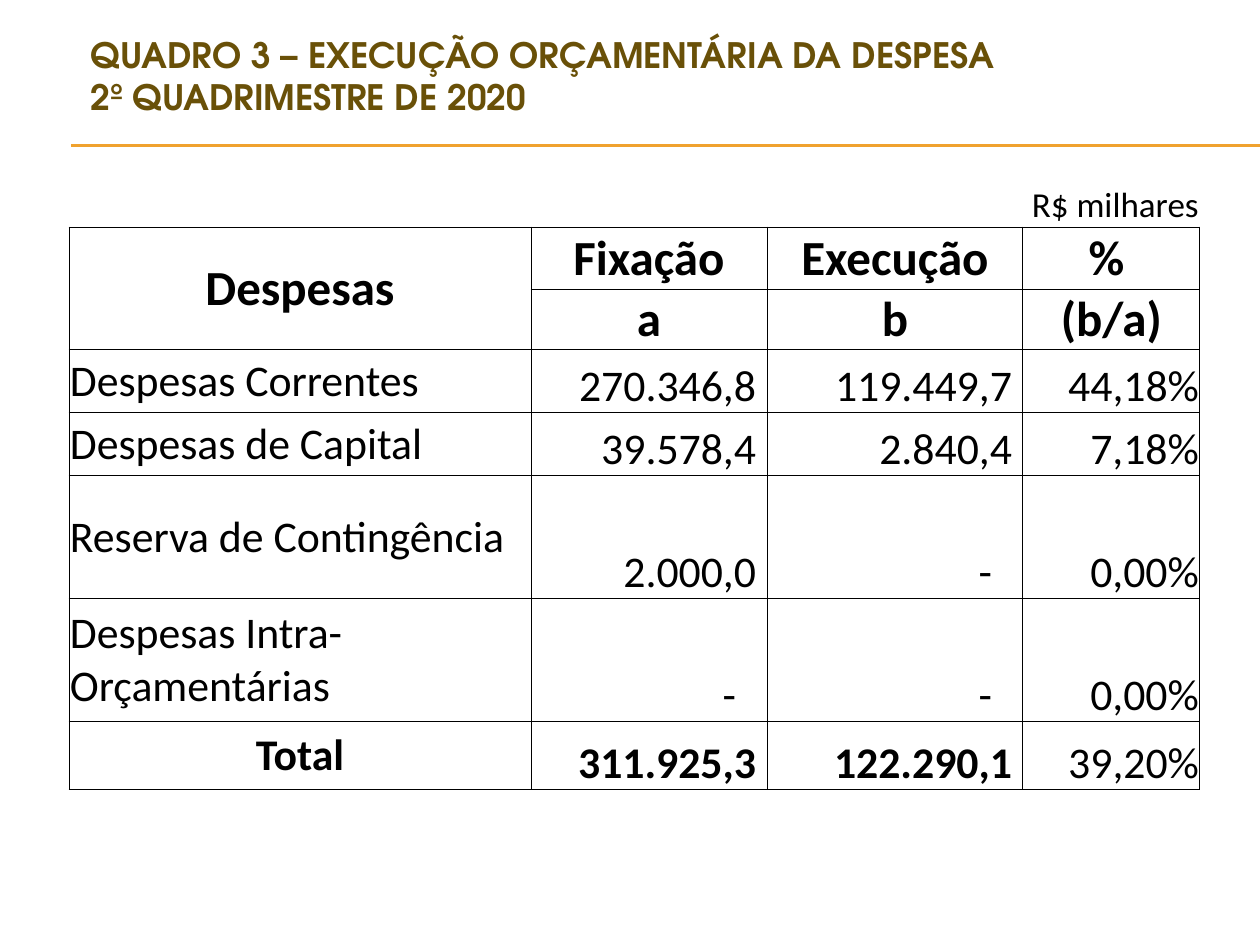
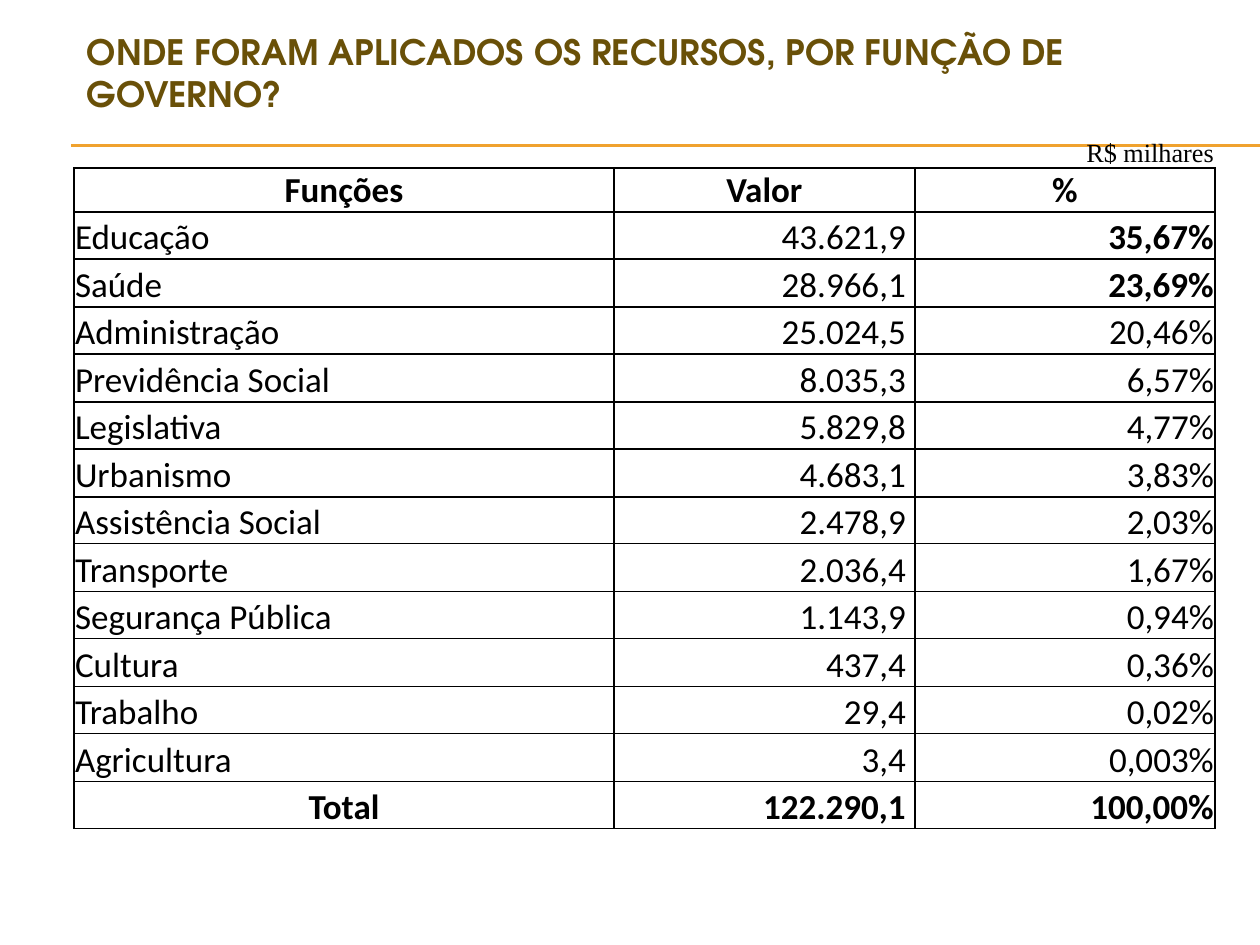
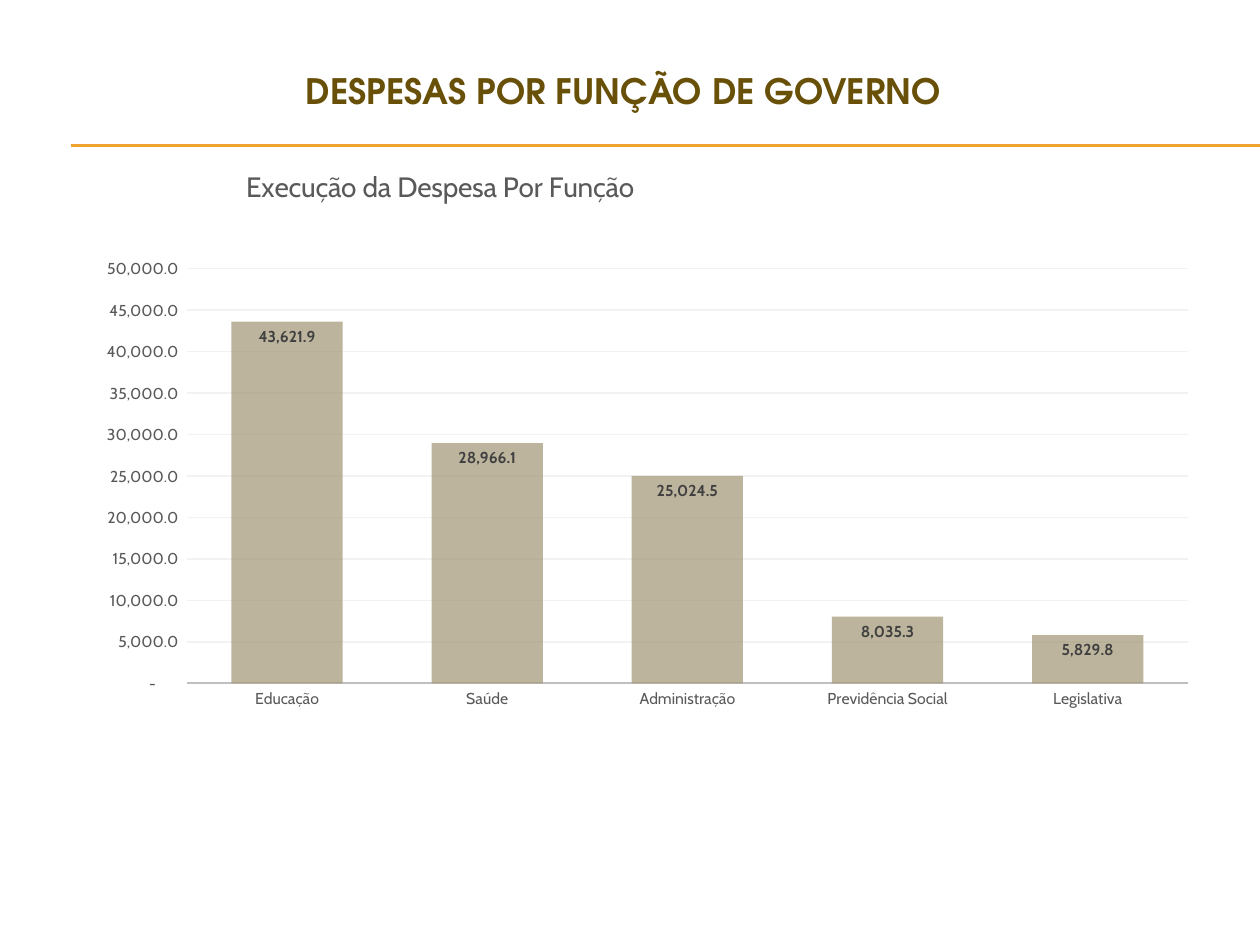
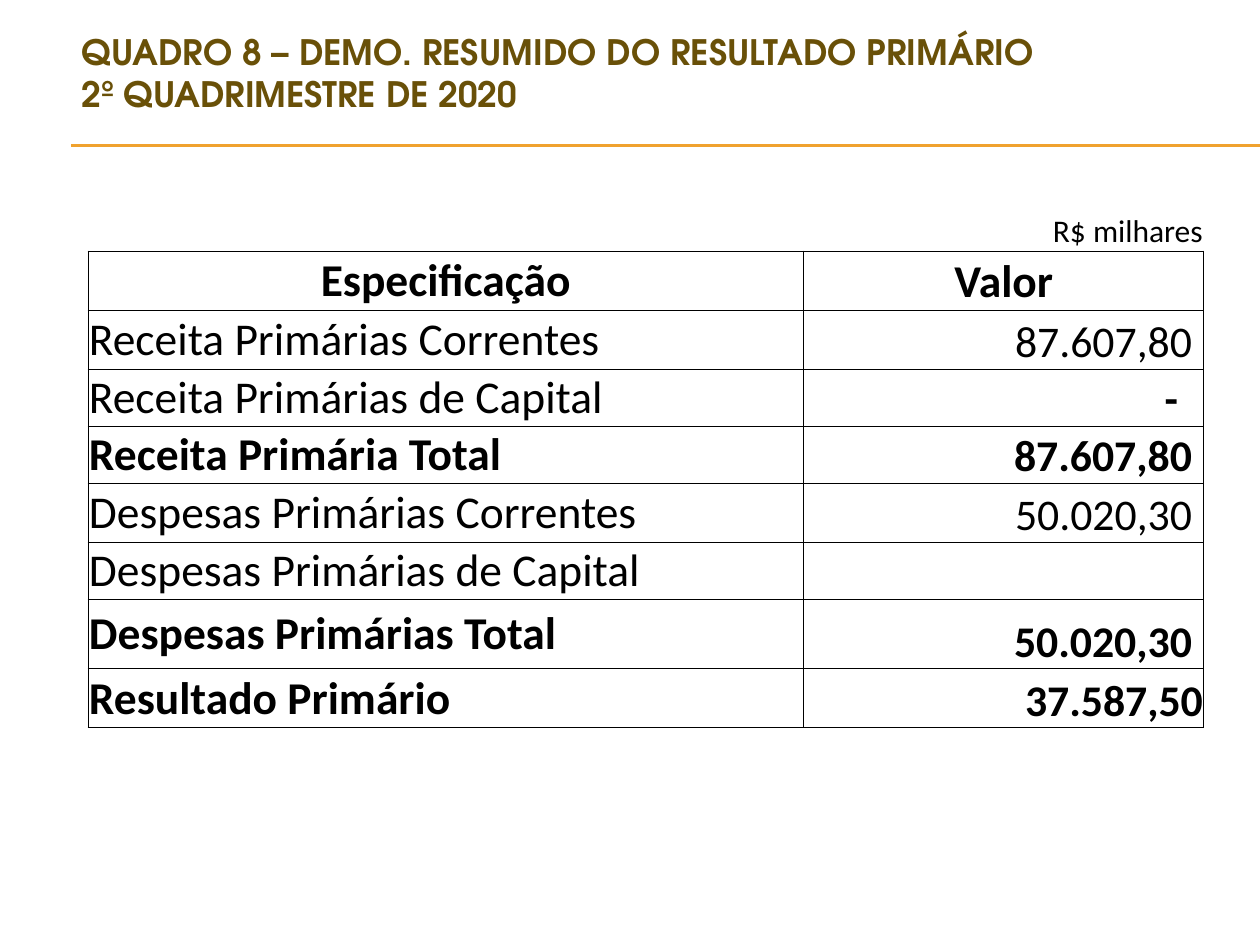
from dataclasses import dataclass

from lxml import etree
from pptx import Presentation
from pptx import util as u
from pptx.chart.data import CategoryChartData
from pptx.dml.color import RGBColor
from pptx.enum import chart as kinds, shapes, text
from pptx.oxml.ns import qn

ALIGN, ANCHOR = text.PP_ALIGN, text.MSO_ANCHOR


@dataclass(frozen=True)
class Theme:
    gold: str = "F0A22E"
    brown: str = "695008"
    black: str = "000000"
    gray: str = "595959"
    dark: str = "404040"
    axis: str = "BFBFBF"
    grid: str = "F2F2F2"
    bar: str = "A19574"
    head: str = "TeX Gyre Adventor"
    body: str = "Calibri"
    serif: str = "Times New Roman"
    plot: str = "Cabin"
    title: int = 20
    label: int = 9
    chart: int = 16


T = Theme()
MONEY = '_-* #,##0.0_-;\\-* #,##0.0_-;_-* "-"??_-;'


def px(n):
    return u.Inches(n / 126)


def put(item, **vals):
    for name, val in vals.items():
        setattr(item, name, val)


def ink(font, size, face=T.body, color=T.black, bold=False):
    put(font, size=u.Pt(size), name=face, bold=bold)
    font.color.rgb = RGBColor.from_string(color)


def stroke(line, color, width):
    line.color.rgb = RGBColor.from_string(color)
    line.width = u.Pt(width)


def node(parent, tag, **attrs):
    return etree.SubElement(parent, qn(tag), attrs)


def rule(slide, y):
    line = slide.shapes.add_connector(
        shapes.MSO_CONNECTOR.STRAIGHT, px(71), px(y), px(1260), px(y))
    stroke(line.line, T.gold, 0.75)
    node(line.element.spPr, "a:effectLst")


def page(deck, title, box, align=ALIGN.LEFT):
    slide = deck.slides.add_slide(deck.slide_layouts[5])
    for y in (145, 146):
        rule(slide, y)
    head = slide.shapes.title
    put(head, **dict(zip(("left", "top", "width", "height"), map(px, box))))
    frame = head.text_frame
    put(frame, text=title, word_wrap=True, auto_size=text.MSO_AUTO_SIZE.NONE,
        vertical_anchor=ANCHOR.MIDDLE)
    para = frame.paragraphs[0]
    para.alignment = align
    for run in para.runs:
        ink(run.font, T.title, T.head, T.brown, True)
    return slide


def edge(cell, sides, width):
    props = cell._tc.get_or_add_tcPr()
    for spot, side in enumerate("LRTB"):
        line = etree.Element(qn(f"a:ln{side}"), w=str(u.Pt(width)))
        if side in sides:
            node(node(line, "a:solidFill"), "a:srgbClr", val=T.black)
        else:
            node(line, "a:noFill")
        props.insert(spot, line)


def write(cell, words, size, face, bold, align, anchor, right):
    put(cell, text=words, vertical_anchor=anchor, margin_right=px(right))
    para = cell.text_frame.paragraphs[0]
    para.alignment = align
    for run in para.runs:
        ink(run.font, size, face, T.black, bold)


def grid(slide, spot, cols, rows, data, sizes, pads, width=0.5, unit=T.body,
         side=ANCHOR.MIDDLE, spans=(), bold=(), tweak=None):
    table = slide.shapes.add_table(
        len(rows), len(cols), *map(px, (*spot, sum(cols), sum(rows)))).table
    put(table, first_row=False, horz_banding=False)
    for col, size in zip(table.columns, cols):
        col.width = px(size)
    for row, size in zip(table.rows, rows):
        row.height = px(size)
    for row, col, high, wide in spans:
        table.cell(row, col).merge(table.cell(row + high - 1, col + wide - 1))

    note, top, name, num = sizes
    heads = 1 + max([high for row, _, high, _ in spans if row == 1], default=1)
    for r, line in enumerate(data):
        for c, words in enumerate(line):
            cell = table.cell(r, c)
            cell.fill.background()
            put(cell, margin_left=px(1), margin_right=0, margin_top=0, margin_bottom=0)
            edge(cell, "LRTB" if r else "B", width)
            if not words:
                continue
            pad = 1 if "%" in words else pads[words == "-"]
            pad = (tweak or {}).get((r, c), pad)
            if r == 0:
                look = note, unit, False, ALIGN.RIGHT, ANCHOR.BOTTOM, 1
            elif r < heads:
                look = (top, T.body, True, ALIGN.CENTER,
                        side if c == 0 else ANCHOR.BOTTOM, pad if "%" in words else 1)
            elif c == 0:
                align = ALIGN.CENTER if words == "Total" else ALIGN.LEFT
                look = name, T.body, (r, c) in bold, align, side, 1
            else:
                look = num, T.body, (r, c) in bold, ALIGN.RIGHT, ANCHOR.BOTTOM, pad
            write(cell, words, *look)


def place(parent, index, **vals):
    for old in parent.findall(qn("c:layout")):
        parent.remove(old)
    layout = etree.Element(qn("c:layout"))
    manual = node(layout, "c:manualLayout")
    for tag, val in vals.items():
        node(manual, f"c:{tag}", val=str(val))
    parent.insert(index, layout)


def bars(slide, box, title, names, vals):
    data = CategoryChartData(number_format=MONEY)
    data.categories = names
    data.add_series("Series 1", vals)
    chart = slide.shapes.add_chart(
        kinds.XL_CHART_TYPE.COLUMN_CLUSTERED, *map(px, box), data).chart
    chart.has_legend = False
    ink(chart.font, 10, T.plot)

    head = chart.chart_title
    head.text_frame.text = title
    ink(head.text_frame.paragraphs[0].runs[0].font, T.chart, T.plot, T.gray)
    place(head._element, 1, xMode="edge", yMode="edge", x=0.2, y=0.01)

    plot = chart.plots[0]
    put(plot, gap_width=80, overlap=25, vary_by_categories=False, has_data_labels=True)
    place(plot._element.getparent(), 0, layoutTarget="inner", xMode="edge",
          yMode="edge", x=0.155, y=0.144, w=0.83, h=0.525)
    series = plot.series[0]
    series.format.fill.solid()
    series.format.fill.fore_color.rgb = RGBColor.from_string(T.bar)
    node(next(series._element.iter(qn("a:srgbClr"))), "a:alpha", val="70000")
    labels = plot.data_labels
    put(labels, show_value=True, number_format=MONEY, number_format_is_linked=False,
        position=kinds.XL_LABEL_POSITION.INSIDE_END)
    ink(labels.font, T.label, T.plot, T.dark, True)

    for axis in (chart.category_axis, chart.value_axis):
        put(axis, major_tick_mark=kinds.XL_TICK_MARK.NONE,
            minor_tick_mark=kinds.XL_TICK_MARK.NONE)
        ink(axis.tick_labels.font, T.label, T.plot, T.gray)
    stroke(chart.category_axis.format.line, T.axis, 1.25)
    scale = chart.value_axis
    put(scale, minimum_scale=0, maximum_scale=50000, major_unit=5000,
        has_major_gridlines=True)
    put(scale.tick_labels, number_format=MONEY, number_format_is_linked=False)
    scale.format.line.fill.background()
    stroke(scale.major_gridlines.format.line, T.grid, 0.75)


def budget(deck):
    slide = page(deck, "QUADRO 3 – EXECUÇÃO ORÇAMENTÁRIA DA DESPESA\v"
                 "2º QUADRIMESTRE DE 2020", (78, 29, 1071, 93))
    lines = [
        ("Despesas", "Fixação", "Execução", "%"),
        ("", "a", "b", "(b/a)"),
        ("Despesas Correntes", "270.346,8", "119.449,7", "44,18%"),
        ("Despesas de Capital", "39.578,4", "2.840,4", "7,18%"),
        ("Reserva de Contingência", "2.000,0", "-", "0,00%"),
        ("Despesas Intra-Orçamentárias", "-", "-", "0,00%"),
        ("Total", "311.925,3", "122.290,1", "39,20%"),
    ]
    data = [[""] * 5 + ["R$ milhares"]]
    data += [(name, fixed, "", done, "", rate) for name, fixed, done, rate in lines]
    spans = [(1, 0, 2, 1)] + [(r, c, 1, 2) for r in range(1, 8) for c in (1, 3)]
    grid(slide, (69, 178), (462, 16, 220, 125, 131, 177),
         (49, 62, 61, 63, 63, 123, 123, 68), data, (20, 28, 25, 25), (11, 31),
         spans=spans, bold={(7, 0), (7, 1), (7, 3)}, tweak={(1, 5): 11})


def areas(deck):
    slide = page(deck, "ONDE FORAM APLICADOS OS RECURSOS, POR FUNÇÃO DE GOVERNO?",
                 (74, 26, 1071, 93))
    data = [
        ("", "", "R$ milhares"),
        ("Funções", "Valor", "%"),
        ("Educação", "43.621,9", "35,67%"),
        ("Saúde", "28.966,1", "23,69%"),
        ("Administração", "25.024,5", "20,46%"),
        ("Previdência Social", "8.035,3", "6,57%"),
        ("Legislativa", "5.829,8", "4,77%"),
        ("Urbanismo", "4.683,1", "3,83%"),
        ("Assistência Social", "2.478,9", "2,03%"),
        ("Transporte", "2.036,4", "1,67%"),
        ("Segurança Pública", "1.143,9", "0,94%"),
        ("Cultura", "437,4", "0,36%"),
        ("Trabalho", "29,4", "0,02%"),
        ("Agricultura", "3,4", "0,003%"),
        ("Total", "122.290,1", "100,00%"),
    ]
    grid(slide, (74, 125), (540, 301, 300), [43, 44] + [47, 48] * 6 + [47], data,
         (15, 20, 20, 20), (9, 9), width=1, unit=T.serif, side=ANCHOR.BOTTOM,
         bold={(2, 2), (3, 2), (14, 0), (14, 1), (14, 2)})


def ranks(deck):
    slide = page(deck, "DESPESAS POR FUNÇÃO DE GOVERNO", (88, 69, 1071, 42),
                 ALIGN.CENTER)
    bars(slide, (0, 155, 1206, 790), "Execução da Despesa Por Função",
         ("Educação", "Saúde", "Administração", "Previdência Social", "Legislativa"),
         (43621.9, 28966.1, 25024.5, 8035.3, 5829.8))


def result(deck):
    slide = page(deck, "QUADRO 8 – DEMO. RESUMIDO DO RESULTADO PRIMÁRIO\v"
                 "2º QUADRIMESTRE DE 2020", (69, 0, 1128, 145))
    lines = [
        ("", "R$ milhares"),
        ("Especificação", "Valor"),
        ("Receita Primárias Correntes", "87.607,80"),
        ("Receita Primárias de Capital", "-"),
        ("Receita Primária Total", "87.607,80"),
        ("Despesas Primárias Correntes", "50.020,30"),
        ("Despesas Primárias de Capital", ""),
        ("Despesas Primárias Total", "50.020,30"),
        ("Resultado Primário", "37.587,50"),
    ]
    data = [(name, "", "", "", val) for name, val in lines]
    bold = {(3, 4)} | {(r, c) for r in (4, 7, 8) for c in (0, 4)}
    grid(slide, (88, 147), (325, 192, 192, 5, 400),
         (104, 59, 59, 57, 57, 59, 57, 70, 59), data, (18, 26, 26, 25), (12, 26),
         spans=[(r, 0, 1, 4) for r in range(1, 9)], bold=bold, tweak={(8, 4): 1})


def main():
    deck = Presentation()
    put(deck, slide_width=px(1260), slide_height=px(945))
    for build in (budget, areas, ranks, result):
        build(deck)
    deck.save("out.pptx")


if __name__ == "__main__":
    main()
